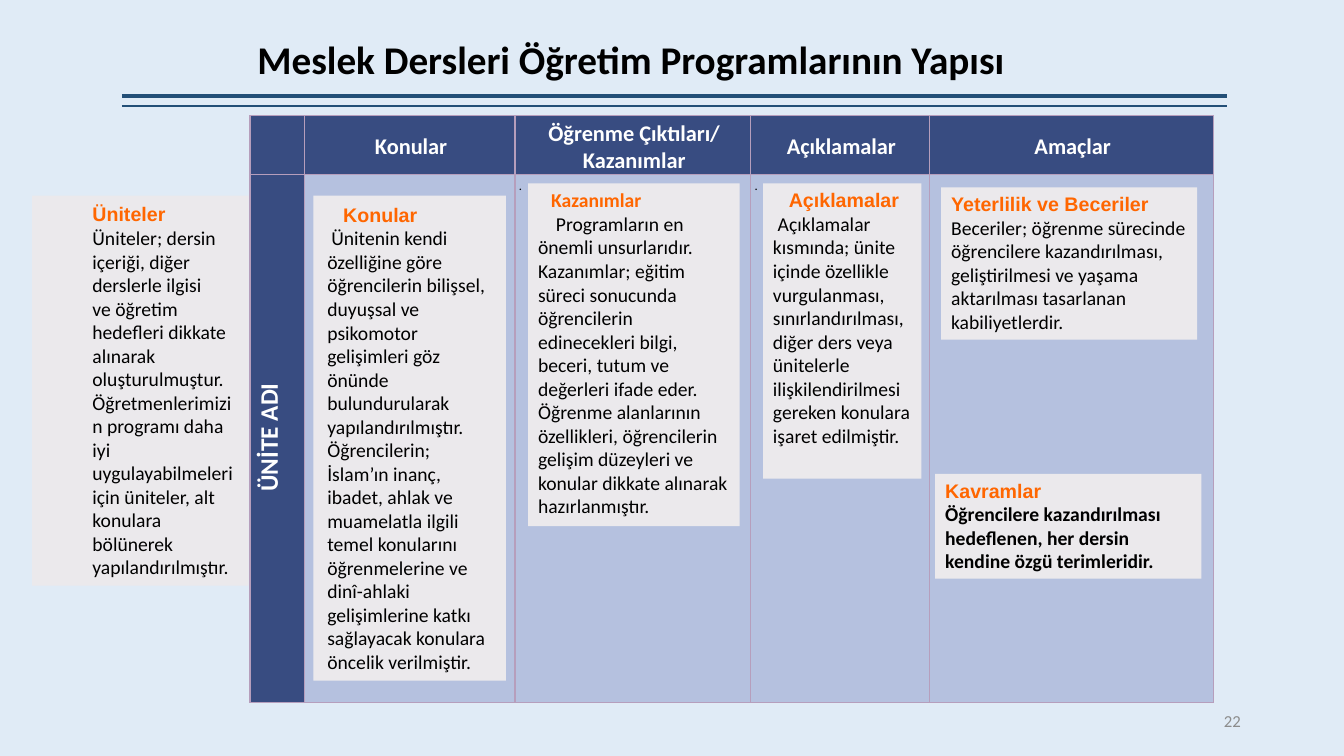
from dataclasses import dataclass

import pptx
import pptx.dml.color
import pptx.enum.shapes
import pptx.enum.text
import pptx.oxml
import pptx.oxml.ns
import pptx.util

Cm = pptx.util.Cm
Pt = pptx.util.Pt
ANCHOR = pptx.enum.text.MSO_ANCHOR
ALIGN = pptx.enum.text.PP_ALIGN

COLORS = {
    "background": "E0EBF6",
    "rule": "234F77",
    "header": "384C81",
    "body": "B5C1DF",
    "border": "B69EBC",
    "card": "EBE9EC",
    "accent": "FF6600",
    "black": "000000",
    "white": "FFFFFF",
    "number": "8C8C8C",
}


@dataclass
class Line:
    text: str
    size: float = 14
    color: str = "black"
    bold: bool = False
    font: str = "Calibri"
    align: ALIGN = ALIGN.LEFT
    margin: float = 0
    first: float = 0
    after: float = 0


@dataclass
class Box:
    left: float
    top: float
    width: float
    height: float
    lines: list[Line]
    anchor: ANCHOR = ANCHOR.TOP
    fill: str = ""
    wrap: bool = True


def rgb(name: str) -> pptx.dml.color.RGBColor:
    return pptx.dml.color.RGBColor.from_string(COLORS[name])


def heading(text: str, font: str = "Arial", margin: float = 0) -> Line:
    return Line(text, color="accent", bold=True, font=font, margin=margin)


def write_lines(text_frame, lines: list[Line]) -> None:
    text_frame.text = "\n".join(line.text for line in lines)
    for paragraph, line in zip(text_frame.paragraphs, lines):
        paragraph.alignment = line.align
        if line.after:
            paragraph.space_after = Pt(line.after)
        properties = paragraph._p.get_or_add_pPr()
        properties.set("marL", str(Cm(line.margin)))
        properties.set("indent", str(Cm(line.first)))
        for run in paragraph.runs:
            run.font.size = Pt(line.size)
            run.font.name = line.font
            run.font.bold = line.bold
            run.font.color.rgb = rgb(line.color)


def draw_box(slide, box: Box) -> None:
    place = [Cm(value) for value in (box.left, box.top, box.width, box.height)]
    if box.fill:
        shape = slide.shapes.add_shape(pptx.enum.shapes.MSO_SHAPE.RECTANGLE, *place)
        shape.shadow.inherit = False
        shape.fill.solid()
        shape.fill.fore_color.rgb = rgb(box.fill)
        shape.line.fill.background()
    else:
        shape = slide.shapes.add_textbox(*place)
    shape.text_frame.word_wrap = box.wrap
    shape.text_frame.vertical_anchor = box.anchor
    write_lines(shape.text_frame, box.lines)


def draw_rule(slide, top: float, width: float) -> None:
    rule = slide.shapes.add_connector(
        pptx.enum.shapes.MSO_CONNECTOR.STRAIGHT, Cm(3.07), Cm(top), Cm(30.91), Cm(top)
    )
    rule.line.color.rgb = rgb("rule")
    rule.line.width = Pt(width)
    rule._element.spPr.append(pptx.oxml.parse_xml(f"<a:effectLst {pptx.oxml.ns.nsdecls('a')}/>"))


def style_cell(cell, fill: str, lines: list[Line], anchor: ANCHOR) -> None:
    cell.fill.solid()
    cell.fill.fore_color.rgb = rgb(fill)
    cell.vertical_anchor = anchor
    cell.margin_left = cell.margin_top = Cm(0.1)
    cell.margin_right, cell.margin_bottom = Cm(0.03), 0
    if lines:
        write_lines(cell.text_frame, lines)
    for index, side in enumerate(("lnL", "lnR", "lnT", "lnB")):
        border = pptx.oxml.parse_xml(
            f'<a:{side} {pptx.oxml.ns.nsdecls("a")} w="{Pt(1)}"><a:solidFill>'
            f'<a:srgbClr val="{COLORS["border"]}"/></a:solidFill></a:{side}>'
        )
        cell._tc.get_or_add_tcPr().insert(index, border)


def draw_table(slide) -> None:
    widths, heights = [1.37, 5.31, 5.94, 4.5, 7.16], [1.45, 13.31]
    table = slide.shapes.add_table(
        2, 5, Cm(6.3), Cm(2.92), Cm(sum(widths)), Cm(sum(heights))
    ).table
    table.first_row = table.horz_banding = False
    for column, width in zip(table.columns, widths):
        column.width = Cm(width)
    for row, height in zip(table.rows, heights):
        row.height = Cm(height)

    headers = [[], ["Konular"], ["Öğrenme Çıktıları/", "Kazanımlar"], ["Açıklamalar"], ["Amaçlar"]]
    for column, texts in enumerate(headers):
        lines = [Line(text, 16, "white", True, align=ALIGN.CENTER) for text in texts]
        style_cell(table.cell(0, column), "header", lines, ANCHOR.MIDDLE)

    unit = table.cell(1, 0)
    unit_name = Line("ÜNİTE ADI", 18, "white", True, align=ALIGN.CENTER, after=8)
    style_cell(unit, "header", [unit_name], ANCHOR.MIDDLE)
    unit._tc.get_or_add_tcPr().set("vert", "vert270")
    for column, text in enumerate(["", ".", ".", ""], start=1):
        lines = [Line(text, 9)] if text else []
        style_cell(table.cell(1, column), "body", lines, ANCHOR.TOP)


TITLE = Box(5.51, 0.76, 20.78, 1.45, [
    Line("Meslek Dersleri Öğretim Programlarının Yapısı", 28, bold=True, align=ALIGN.CENTER),
], wrap=False)
NUMBER = Box(29.74, 17.65, 1.78, 1.02, [
    Line("22", 12, "number", align=ALIGN.RIGHT),
], ANCHOR.MIDDLE)
CARDS = [
    Box(0.81, 4.93, 5.46, 9.83, [
        heading("Üniteler", margin=1.27),
        Line("Üniteler; dersin içeriği, diğer derslerle ilgisi\vve öğretim hedefleri dikkate alınarak "
             "oluşturulmuştur. Öğretmenlerimizin programı daha iyi uygulayabilmeleri için üniteler, "
             "alt konulara bölünerek yapılandırılmıştır.", margin=1.27),
    ], ANCHOR.MIDDLE, "card"),
    Box(13.31, 4.62, 5.33, 8.64, [
        heading("Kazanımlar", "Calibri", 0.33),
        Line("Programların en önemli unsurlarıdır. Kazanımlar; eğitim süreci sonucunda öğrencilerin "
             "edinecekleri bilgi, beceri, tutum ve değerleri ifade eder. Öğrenme alanlarının "
             "özellikleri, öğrencilerin gelişim düzeyleri ve konular dikkate alınarak "
             "hazırlanmıştır.", first=0.45),
    ], fill="card"),
    Box(23.72, 4.72, 6.45, 3.84, [
        heading("Yeterlilik ve Beceriler"),
        Line("Beceriler; öğrenme sürecinde öğrencilere kazandırılması, geliştirilmesi ve yaşama "
             "aktarılması tasarlanan kabiliyetlerdir."),
    ], fill="card"),
    Box(7.9, 4.93, 4.85, 12.22, [
        heading("Konular", margin=0.5),
        Line("Ünitenin kendi özelliğine göre öğrencilerin bilişsel, duyuşsal ve psikomotor "
             "gelişimleri göz önünde bulundurularak yapılandırılmıştır. Öğrencilerin; İslam’ın "
             "inanç, ibadet, ahlak ve muamelatla ilgili temel konularını öğrenmelerine ve "
             "dinî-ahlaki gelişimlerine katkı sağlayacak konulara öncelik verilmiştir.",
             margin=0.1, first=0.1),
    ], ANCHOR.MIDDLE, "card"),
    Box(19.23, 4.62, 3.99, 7.44, [
        heading("Açıklamalar", margin=0.4),
        Line("Açıklamalar kısmında; ünite içinde özellikle vurgulanması, sınırlandırılması, "
             "diğer ders veya", first=0.12),
        Line("ünitelerle ilişkilendirilmesi gereken konulara işaret edilmiştir."),
    ], fill="card"),
    Box(23.57, 11.94, 6.71, 2.64, [
        heading("Kavramlar"),
        Line("Öğrencilere kazandırılması hedeflenen, her dersin kendine özgü terimleridir.", bold=True),
    ], fill="card"),
]


def main() -> None:
    presentation = pptx.Presentation()
    presentation.slide_width, presentation.slide_height = Cm(33.87), Cm(19.05)
    slide = presentation.slides.add_slide(presentation.slide_layouts[6])
    slide.background.fill.solid()
    slide.background.fill.fore_color.rgb = rgb("background")
    draw_rule(slide, 2.41, 3)
    draw_rule(slide, 2.67, 1)
    draw_table(slide)
    for box in [NUMBER, *CARDS, TITLE]:
        draw_box(slide, box)
    presentation.save("out.pptx")


if __name__ == "__main__":
    main()
